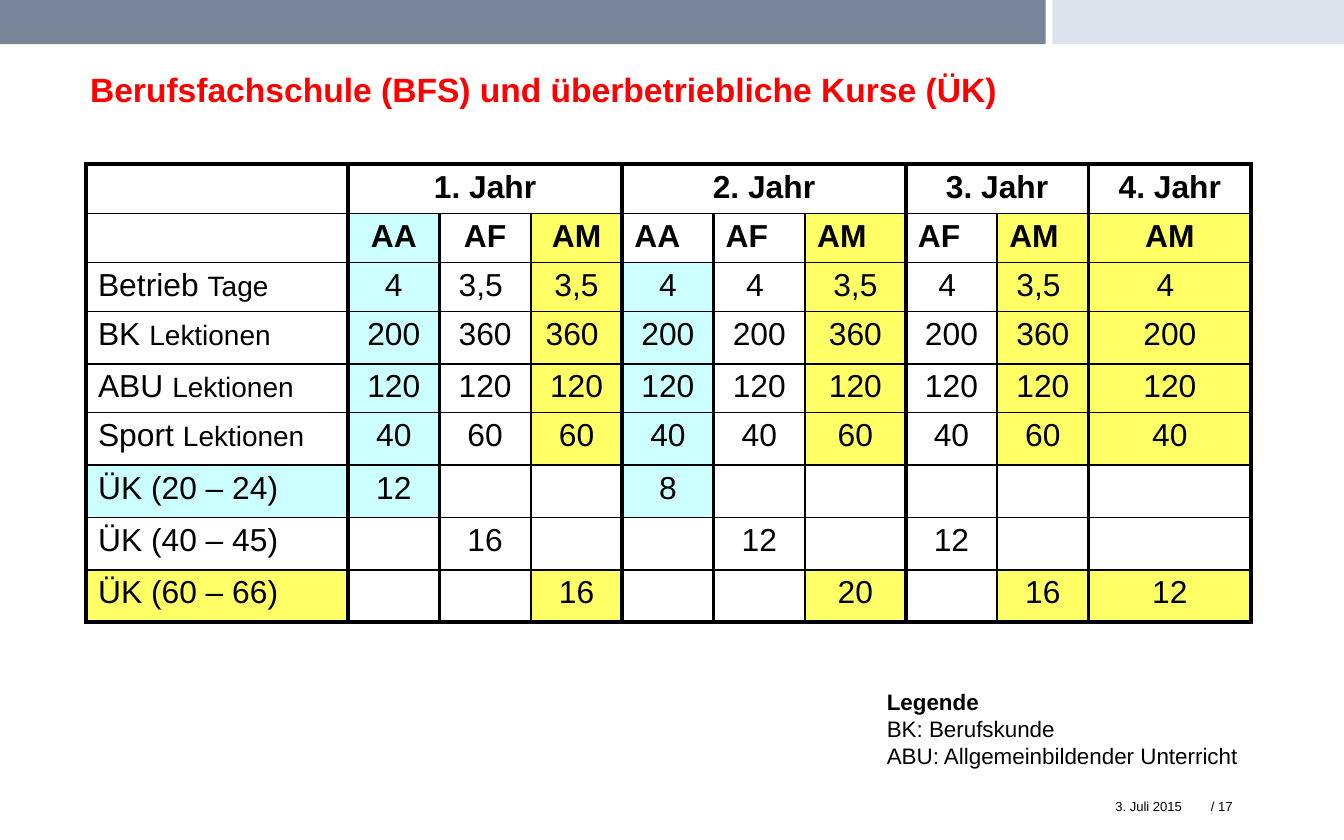
from dataclasses import dataclass

from lxml.etree import SubElement
from pptx import Presentation
from pptx.dml.color import RGBColor
from pptx.enum.shapes import MSO_SHAPE as Shape
from pptx.enum.text import PP_ALIGN as Align
from pptx.oxml.ns import qn
from pptx.util import Inches, Pt

COLORS = {"slate": "788598", "mist": "DCE3EC", "red": "FE0000", "black": "000000",
          "cyan": "CCFFFF", "yellow": "FFFF66"}
TRACK_FILLS = {"AA": "cyan", "AM": "yellow"}
TRACKS = ["", "AA", "AF", "AM", "AA", "AF", "AM", "AF", "AM", "AM"]
COL_WIDTHS = [1.95, 0.68, 0.68, 0.68, 0.68, 0.68, 0.75, 0.68, 0.68, 1.21]
ROW_HEIGHTS = [0.37, 0.36, 0.36, 0.39, 0.36, 0.39, 0.39, 0.39, 0.39]
LEFT_HEADS = range(4, 9)
THICK, THIN = 2.25, 1


@dataclass(frozen=True)
class Band:
    left: float
    width: float
    color: str


@dataclass(frozen=True)
class Year:
    title: str
    first: int
    last: int


@dataclass(frozen=True)
class Row:
    label: str
    values: list[str]
    unit: str = ""
    fill: str = ""


BANDS = [Band(0, 7.78, "slate"), Band(7.83, 2.17, "mist")]
YEARS = [Year("1. Jahr", 1, 3), Year("2. Jahr", 4, 6), Year("3. Jahr", 7, 8),
         Year("4. Jahr", 9, 9)]
ROWS = [
    Row("Betrieb ", ["4", "3,5 ", "3,5", "4", "4 ", "3,5", "4 ", "3,5 ", "4 "], "Tage"),
    Row("BK ", ["200", "360", "360 ", "200", "200", "360", "200", "360", "200"], "Lektionen"),
    Row("ABU ", ["120"] * 9, "Lektionen"),
    Row("Sport ", ["40", "60", "60", "40", "40", "60", "40", "60", "40"], "Lektionen"),
    Row("ÜK (20 – 24)", ["12", "", "", "8", "", "", "", "", ""], fill="cyan"),
    Row("ÜK (40 – 45)", ["", "16", "", "", "12", "", "12", "", ""]),
    Row("ÜK (60 – 66)", ["", "", "16", "", "", "20", "", "16", "12"], fill="yellow"),
]


def rgb(name: str) -> RGBColor:
    return RGBColor.from_string(COLORS[name])


def add_run(p, text: str, *, size: float = 17, bold: bool = False, color: str = "black") -> None:
    r = p.add_run()
    r.text = text
    r.font.name, r.font.size, r.font.bold = "Arial", Pt(size), bold
    r.font.color.rgb = rgb(color)


def add_band(s, band: Band) -> None:
    sp = s.shapes.add_shape(Shape.RECTANGLE, Inches(band.left), 0, Inches(band.width), Inches(0.33))
    sp.shadow.inherit = False
    sp.fill.solid()
    sp.fill.fore_color.rgb = rgb(band.color)
    sp.line.fill.background()


def add_text(s, box: tuple[float, ...], lines: list[str], *, size: float, color: str = "black",
             bold_first: bool = False, side: float = 0.09, top: float = 0.04) -> None:
    tf = s.shapes.add_textbox(*map(Inches, box)).text_frame
    tf.word_wrap = True
    tf.margin_left = tf.margin_right = Inches(side)
    tf.margin_top, tf.margin_bottom = Inches(top), Inches(0.04)
    for i, line in enumerate(lines):
        p = tf.paragraphs[0] if i == 0 else tf.add_paragraph()
        add_run(p, line, size=size, bold=bold_first and i == 0, color=color)


def set_borders(cell, row: int, col: int) -> None:
    def inner(i: int) -> float:
        return THIN if row > 0 and TRACKS[i] == "AF" else THICK

    widths = {
        "L": inner(col - 1) if col else THICK,
        "R": inner(col),
        "T": THICK if row == 0 else THIN,
        "B": THICK if row == len(ROW_HEIGHTS) - 1 else THIN,
    }
    tc_pr = cell._tc.get_or_add_tcPr()
    for edge, width in widths.items():
        ln = SubElement(tc_pr, qn(f"a:ln{edge}"), w=str(Pt(width)))
        SubElement(SubElement(ln, qn("a:solidFill")), qn("a:srgbClr"), val=COLORS["black"])


def fill_cell(cell, text: str, *, unit: str = "", bold: bool = False, fill: str = "",
              align: Align = Align.CENTER) -> None:
    cell.margin_left = cell.margin_right = Inches(0.09)
    cell.margin_top = cell.margin_bottom = Inches(0.04 if text else 0)
    if fill:
        cell.fill.solid()
        cell.fill.fore_color.rgb = rgb(fill)
    else:
        cell.fill.background()
    p = cell.text_frame.paragraphs[0]
    p.alignment = align
    if text:
        add_run(p, text, bold=bold)
    if unit:
        add_run(p, unit, size=15)


def add_lesson_table(s) -> None:
    frame = s.shapes.add_table(len(ROW_HEIGHTS), len(COL_WIDTHS), Inches(0.64), Inches(1.22),
                               Inches(sum(COL_WIDTHS)), Inches(sum(ROW_HEIGHTS)))
    table = frame.table
    table.first_row = table.horz_banding = False
    for column, width in zip(table.columns, COL_WIDTHS):
        column.width = Inches(width)
    for row, height in zip(table.rows, ROW_HEIGHTS):
        row.height = Inches(height)
    for i in range(len(ROW_HEIGHTS)):
        for j in range(len(COL_WIDTHS)):
            set_borders(table.cell(i, j), i, j)

    fill_cell(table.cell(0, 0), "")
    for year in YEARS:
        cell = table.cell(0, year.first)
        if year.last > year.first:
            cell.merge(table.cell(0, year.last))
        fill_cell(cell, year.title, bold=True)
    for j, track in enumerate(TRACKS):
        left = j in LEFT_HEADS
        fill = "" if left and track == "AA" else TRACK_FILLS.get(track, "")
        fill_cell(table.cell(1, j), track, bold=True, fill=fill,
                  align=Align.LEFT if left else Align.CENTER)
    for i, row in enumerate(ROWS, 2):
        fill_cell(table.cell(i, 0), row.label, unit=row.unit, fill=row.fill, align=Align.LEFT)
        for j, value in enumerate(row.values, 1):
            fill = TRACK_FILLS.get(TRACKS[j], "") if value else ""
            fill_cell(table.cell(i, j), value, fill=fill)


def main() -> None:
    """Build the slide with the lesson table for each training year."""
    prs = Presentation()
    prs.slide_width, prs.slide_height = Inches(10), Inches(6.25)
    s = prs.slides.add_slide(prs.slide_layouts[6])
    for band in BANDS:
        add_band(s, band)
    add_text(s, (8.21, 5.9, 1.56, 0.42), ["3. Juli 2015"], size=7)
    add_text(s, (8.92, 5.9, 0.77, 0.42), ["/ 17"], size=7)
    add_text(s, (0.58, 0.44, 8.85, 0.69),
             ["Berufsfachschule (BFS) und überbetriebliche Kurse (ÜK)"],
             size=18, color="red", bold_first=True, top=0.07)
    add_lesson_table(s)
    add_text(s, (6.5, 5.07, 2.89, 0.71),
             ["Legende", "BK: Berufskunde", "ABU: Allgemeinbildender Unterricht"],
             size=12, bold_first=True, side=0.1, top=0.05)
    prs.save("out.pptx")


if __name__ == "__main__":
    main()
